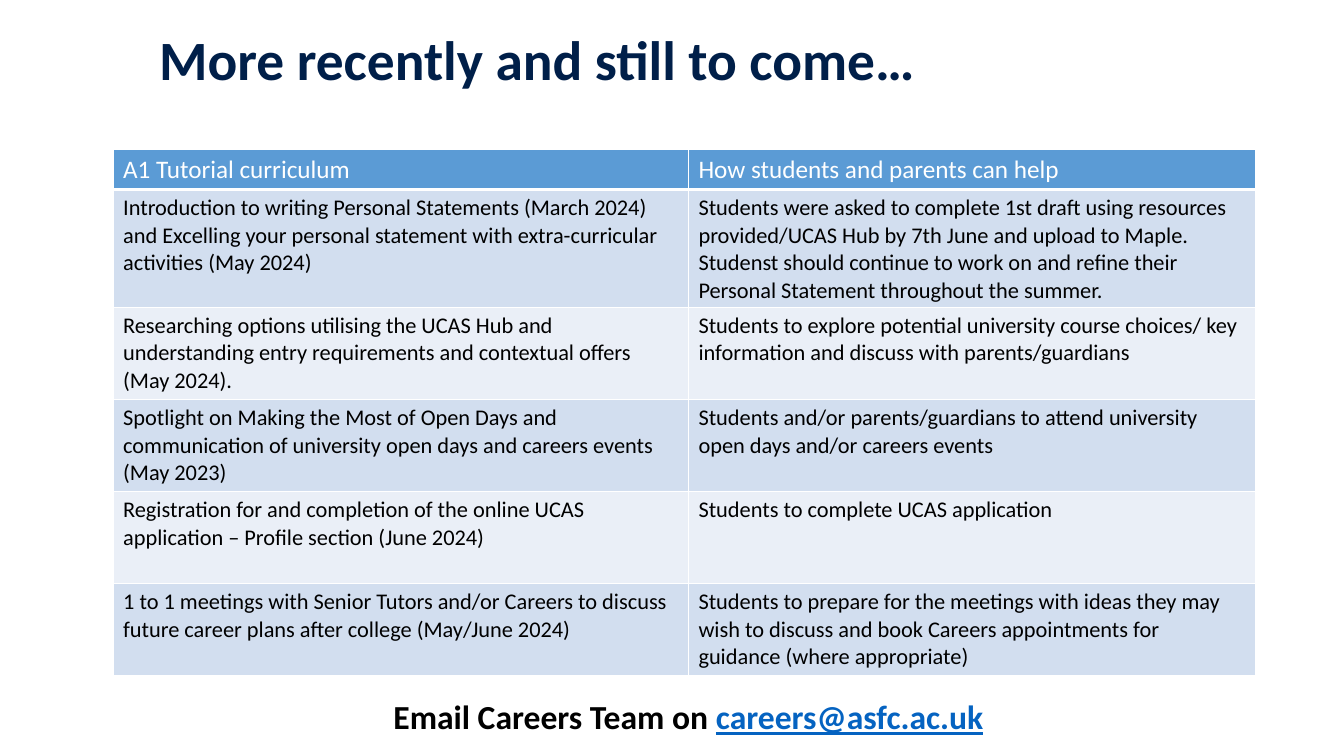
from lxml.etree import SubElement as Sub
from pptx import Presentation
from pptx.dml.color import RGBColor as Rgb
from pptx.enum.text import MSO_ANCHOR as Anchor, PP_ALIGN as Align
from pptx.oxml.ns import qn
from pptx.util import Cm, Pt

WHITE, BLACK, NAVY, LINK = "FFFFFF", "000000", "001F49", "0563C1"
HEAD, BANDS = "5B9BD5", ("D2DEEF", "EAEFF7")

ROWS = [
    ("A1 Tutorial curriculum", "How students and parents can help"),
    ("Introduction to writing Personal Statements (March 2024) and Excelling your "
     "personal statement with extra-curricular activities (May 2024)",
     "Students were asked to complete 1st draft using resources provided/UCAS Hub by "
     "7th June and upload to Maple. Studenst should continue to work on and refine "
     "their Personal Statement throughout the summer."),
    ("Researching options utilising the UCAS Hub and understanding entry requirements "
     "and contextual offers (May 2024).",
     "Students to explore potential university course choices/ key information and "
     "discuss with parents/guardians"),
    ("Spotlight on Making the Most of Open Days and communication of university open "
     "days and careers events (May 2023)",
     "Students and/or parents/guardians to attend university open days and/or careers "
     "events"),
    ("Registration for and completion of the online UCAS application – Profile section "
     "(June 2024)",
     "Students to complete UCAS application"),
    ("1 to 1 meetings with Senior Tutors and/or Careers to discuss future career plans "
     "after college (May/June 2024)",
     "Students to prepare for the meetings with ideas they may wish to discuss and book "
     "Careers appointments for guidance (where appropriate)"),
]


def tint(hue):
    """Turn a hex string into a colour."""
    return Rgb.from_string(hue)


def style(run, size, hue, bold=False):
    """Set the font of a run."""
    font = run.font
    font.name, font.size, font.bold = "Calibri", Pt(size), bold
    font.color.rgb = tint(hue)


def add_text(slide, left, top, width, height, parts, size):
    """Add a bold line of text made of coloured parts and return its frame."""
    box = slide.shapes.add_textbox(Cm(left), Cm(top), Cm(width), Cm(height))
    frame = box.text_frame
    frame.word_wrap = True
    for text, hue in parts:
        run = frame.paragraphs[0].add_run()
        run.text = text
        style(run, size, hue, True)
    return frame


def add_edge(cell, side, width):
    """Draw one white edge of a cell."""
    line = Sub(cell._tc.get_or_add_tcPr(), qn(f"a:ln{side}"), w=str(Pt(width)))
    Sub(Sub(line, qn("a:solidFill")), qn("a:srgbClr"), val=WHITE)


def fill_cell(cell, text, row):
    """Write a cell and dress it as header or band."""
    head = row == 0
    cell.text_frame.text = text
    style(cell.text_frame.paragraphs[0].runs[0],
          18 if head else 16, WHITE if head else BLACK)
    for side in "LRTB":
        thick = (head and side == "B") or (row == 1 and side == "T")
        add_edge(cell, side, 3 if thick else 1)
    cell.fill.solid()
    cell.fill.fore_color.rgb = tint(HEAD if head else BANDS[(row - 1) % 2])


def add_grid(slide):
    """Add the curriculum table."""
    table = slide.shapes.add_table(
        len(ROWS), 2, Cm(2.85), Cm(3.76), Cm(28.8), Cm(12.54)).table
    for col, width in zip(table.columns, (14.5, 14.3)):
        col.width = Cm(width)
    for row, texts in enumerate(ROWS):
        table.rows[row].height = Cm(2.32 if row else 0.94)
        for col, text in enumerate(texts):
            fill_cell(table.cell(row, col), text, row)


def main():
    """Build the slide and save it."""
    deck = Presentation()
    deck.slide_width, deck.slide_height = Cm(33.87), Cm(19.05)
    slide = deck.slides.add_slide(deck.slide_layouts[6])
    title = add_text(slide, 3.76, 0.76, 26.62, 1.65,
                     [("More recently and still to come…", NAVY)], 39.6)
    title.vertical_anchor = Anchor.MIDDLE
    title.paragraphs[0].line_spacing = 0.9
    add_grid(slide)
    mail = add_text(slide, 5.94, 17.42, 23.01, 1.27,
                    [("Email Careers Team on ", BLACK),
                     ("careers@asfc.ac.uk", LINK), (" ", BLACK)], 24)
    mail.paragraphs[0].alignment = Align.CENTER
    mail.paragraphs[0].runs[1].font.underline = True
    deck.save("out.pptx")


if __name__ == "__main__":
    main()
